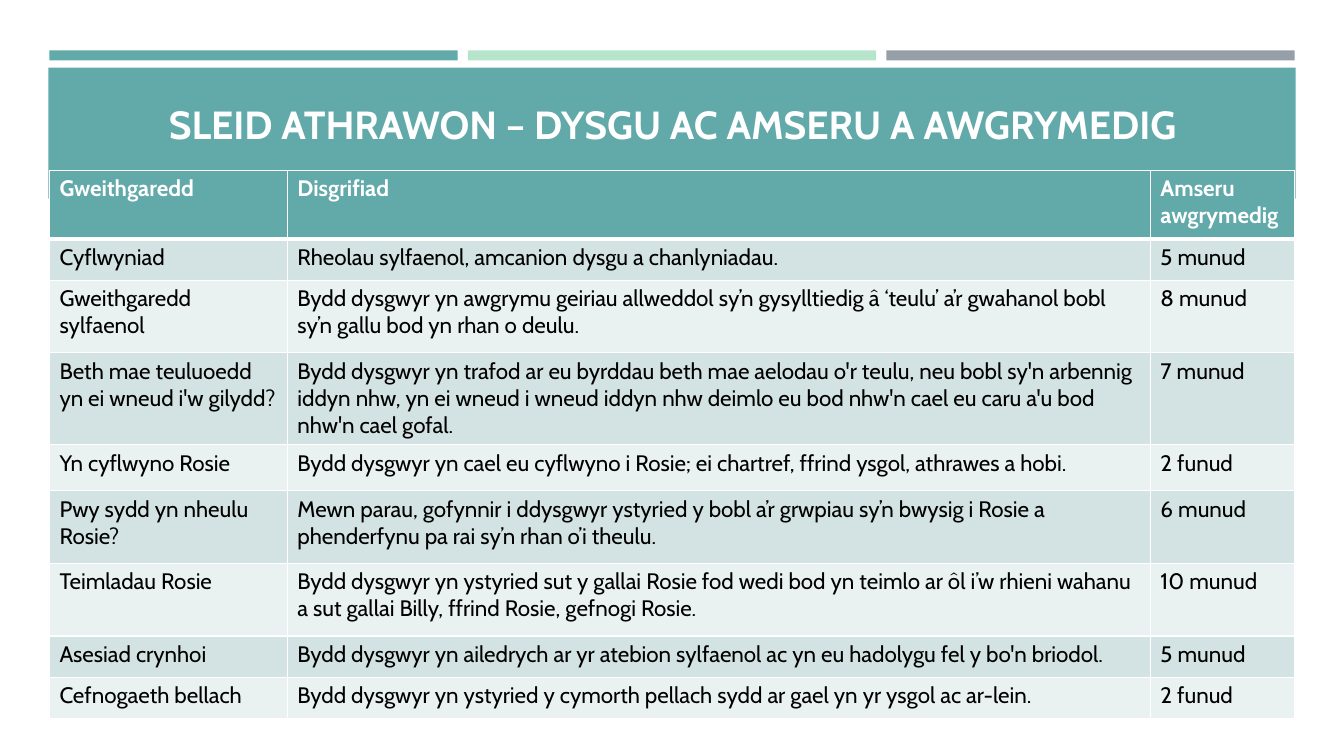
"""Build the teachers' slide with its lesson activities and suggested timings."""
from lxml.etree import SubElement
from pptx import Presentation
from pptx.dml.color import RGBColor
from pptx.enum.shapes import MSO_SHAPE
from pptx.enum.text import MSO_ANCHOR, PP_ALIGN
from pptx.oxml.ns import qn
from pptx.util import Inches, Pt

TITLE = "SLEID ATHRAWON – DYSGU AC AMSERU A AWGRYMEDIG"
HEADER = ("Gweithgaredd", "Disgrifiad", "Amseru awgrymedig")
ACTIVITIES = [
    ("Cyflwyniad", "Rheolau sylfaenol, amcanion dysgu a chanlyniadau.", "5 munud"),
    ("Gweithgaredd sylfaenol",
     "Bydd dysgwyr yn awgrymu geiriau allweddol sy’n gysylltiedig â ‘teulu’ a’r gwahanol bobl "
     "sy’n gallu bod yn rhan o deulu.", "8 munud"),
    ("Beth mae teuluoedd yn ei wneud i'w gilydd?",
     "Bydd dysgwyr yn trafod ar eu byrddau beth mae aelodau o'r teulu, neu bobl sy'n arbennig "
     "iddyn nhw, yn ei wneud i wneud iddyn nhw deimlo eu bod nhw'n cael eu caru a'u bod nhw'n "
     "cael gofal.", "7 munud"),
    ("Yn cyflwyno Rosie",
     "Bydd dysgwyr yn cael eu cyflwyno i Rosie; ei chartref, ffrind ysgol, athrawes a hobi.",
     "2 funud"),
    ("Pwy sydd yn nheulu Rosie?",
     "Mewn parau, gofynnir i ddysgwyr ystyried y bobl a’r grwpiau sy’n bwysig i Rosie a "
     "phenderfynu pa rai sy’n rhan o’i theulu.", "6 munud"),
    ("Teimladau Rosie",
     "Bydd dysgwyr yn ystyried sut y gallai Rosie fod wedi bod yn teimlo ar ôl i’w rhieni "
     "wahanu a sut gallai Billy, ffrind Rosie, gefnogi Rosie.", "10 munud"),
    ("Asesiad crynhoi",
     "Bydd dysgwyr yn ailedrych ar yr atebion sylfaenol ac yn eu hadolygu fel y bo'n briodol.",
     "5 munud"),
    ("Cefnogaeth bellach",
     "Bydd dysgwyr yn ystyried y cymorth pellach sydd ar gael yn yr ysgol ac ar-lein.",
     "2 funud"),
]
COLORS = {"teal": "62A9AA", "mint": "B7E5CB", "grey": "969FA7", "white": "FFFFFF",
          "black": "000000", "dark_band": "D3E2E2", "light_band": "EAF1F1"}
FONT = "Cabin"
LEFT = 0.49
STRIPES = ("teal", "mint", "grey")
STRIPE_WIDTH, STRIPE_PITCH = 4.05, 4.15
COLUMN_WIDTHS = (2.36, 8.56, 1.43)
ROW_HEIGHTS = (0.68, 0.41, 0.72, 0.91, 0.46, 0.72, 0.72, 0.41, 0.41)


def color(name):
    return RGBColor.from_string(COLORS[name])


def add_bar(slide, left, top, width, height, fill):
    shape = slide.shapes.add_shape(
        MSO_SHAPE.RECTANGLE, Inches(left), Inches(top), Inches(width), Inches(height))
    shape.shadow.inherit = False
    shape.fill.solid()
    shape.fill.fore_color.rgb = color(fill)
    shape.line.fill.background()


def style_paragraph(paragraph, size, text_color, bold):
    paragraph.font.name = FONT
    paragraph.font.size = Pt(size)
    paragraph.font.bold = bold
    paragraph.font.color.rgb = color(text_color)


def add_borders(cell, bottom_width):
    properties = cell._tc.get_or_add_tcPr()
    widths = {"a:lnL": 1, "a:lnR": 1, "a:lnT": 1, "a:lnB": bottom_width}
    for position, (tag, width) in enumerate(widths.items()):
        line = SubElement(properties, qn(tag), w=str(Pt(width)))
        fill = SubElement(line, qn("a:solidFill"))
        SubElement(fill, qn("a:srgbClr"), val=COLORS["white"])
        properties.insert(position, line)


def add_title(slide):
    box = slide.shapes.add_textbox(Inches(0.64), Inches(0.77), Inches(12.06), Inches(0.92))
    frame = box.text_frame
    frame.word_wrap = True
    frame.vertical_anchor = MSO_ANCHOR.MIDDLE
    paragraph = frame.paragraphs[0]
    paragraph.text = TITLE
    paragraph.alignment = PP_ALIGN.CENTER
    style_paragraph(paragraph, 28, "white", True)


def add_timetable(slide):
    rows = [HEADER, *ACTIVITIES]
    table = slide.shapes.add_table(
        len(rows), len(HEADER), Inches(LEFT), Inches(1.69),
        Inches(sum(COLUMN_WIDTHS)), Inches(sum(ROW_HEIGHTS))).table
    for column, width in zip(table.columns, COLUMN_WIDTHS):
        column.width = Inches(width)
    for row, height in zip(table.rows, ROW_HEIGHTS):
        row.height = Inches(height)
    for row_index, texts in enumerate(rows):
        is_header = row_index == 0
        band = "teal" if is_header else ("light_band", "dark_band")[row_index % 2]
        for column_index, text in enumerate(texts):
            cell = table.cell(row_index, column_index)
            cell.text = text
            cell.fill.solid()
            cell.fill.fore_color.rgb = color(band)
            style_paragraph(cell.text_frame.paragraphs[0], 16,
                            "white" if is_header else "black", is_header)
            add_borders(cell, 3 if is_header else 1)


def main():
    presentation = Presentation()
    presentation.slide_width, presentation.slide_height = Inches(13.33), Inches(7.5)
    slide = presentation.slides.add_slide(presentation.slide_layouts[6])
    for index, fill in enumerate(STRIPES):
        add_bar(slide, LEFT + index * STRIPE_PITCH, 0.5, STRIPE_WIDTH, 0.1, fill)
    add_bar(slide, 0.48, 0.67, 12.37, 1.3, "teal")
    add_title(slide)
    add_timetable(slide)
    presentation.save("out.pptx")


if __name__ == "__main__":
    main()
